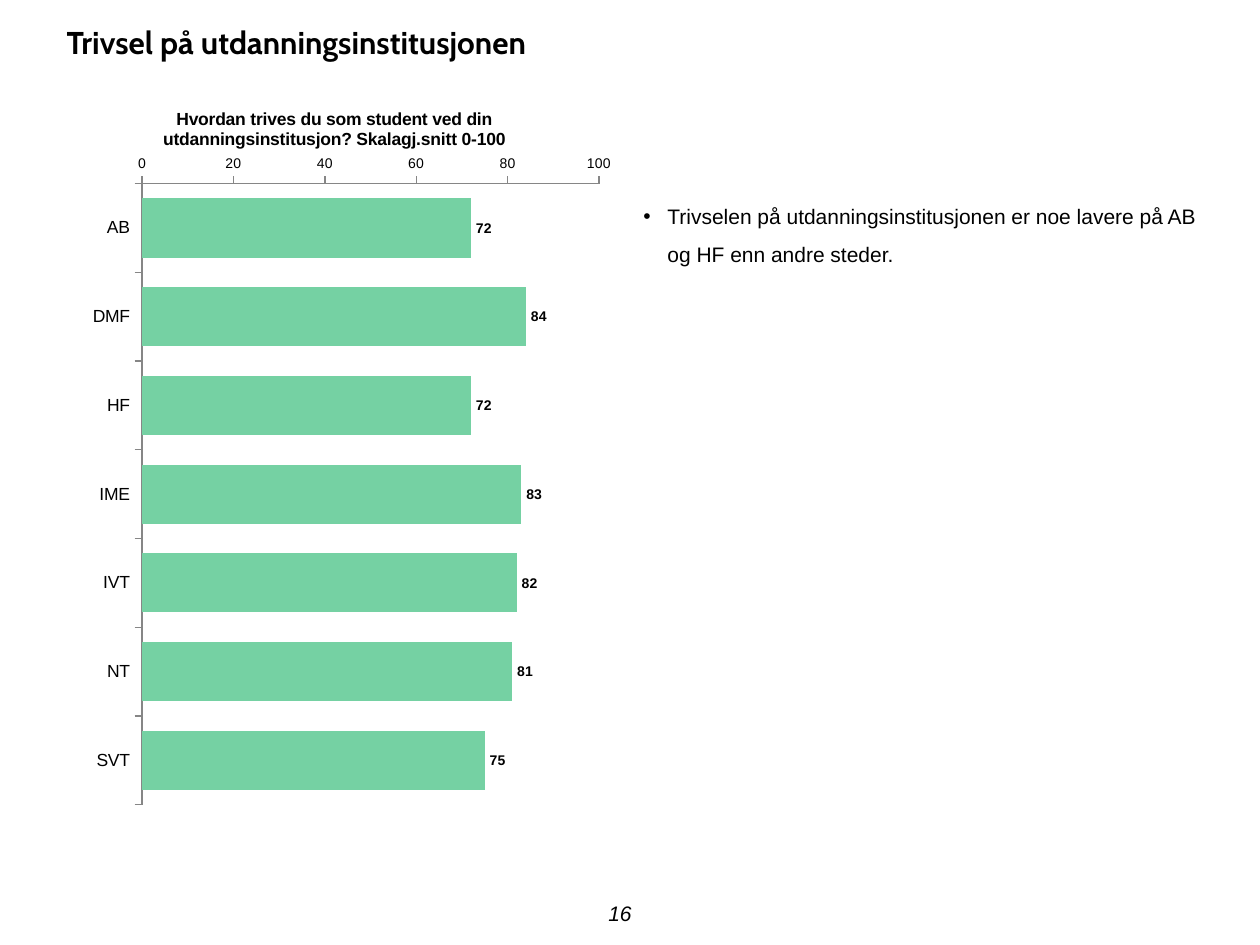
"""Build a slide on student well-being by faculty, with a bar chart and a comment."""
import pptx
import pptx.chart.data
import pptx.dml.color
import pptx.enum.chart
import pptx.enum.text
import pptx.oxml
import pptx.oxml.ns
import pptx.util

EMU_PER_PX = 914400 / 126
BLACK = pptx.dml.color.RGBColor(0x00, 0x00, 0x00)
GREY = pptx.dml.color.RGBColor(0x86, 0x86, 0x86)
GREEN = pptx.dml.color.RGBColor(0x75, 0xD1, 0xA3)
TITLE_ONLY = 5
SCORES = {"AB": 72, "DMF": 84, "HF": 72, "IME": 83, "IVT": 82, "NT": 81, "SVT": 75}


def px(length):
    return pptx.util.Emu(round(length * EMU_PER_PX))


def place(shape, left, top, width, height):
    shape.left, shape.top = px(left), px(top)
    shape.width, shape.height = px(width), px(height)


def style(font, size, name="Arial", bold=False, italic=False):
    font.size = pptx.util.Pt(size)
    font.name = name
    font.bold = bold
    font.italic = italic
    font.color.rgb = BLACK


def add_title(page, text):
    title = page.shapes.title
    place(title, 54, 16, 1155, 51)
    frame = title.text_frame
    frame.text = text
    frame.auto_size = pptx.enum.text.MSO_AUTO_SIZE.SHAPE_TO_FIT_TEXT
    frame.vertical_anchor = pptx.enum.text.MSO_ANCHOR.MIDDLE
    para = frame.paragraphs[0]
    para.alignment = pptx.enum.text.PP_ALIGN.LEFT
    style(para.font, 18, name="Cabin", bold=True)


def add_text(page, text, bounds, wrap=True):
    box = page.shapes.add_textbox(*map(px, bounds))
    box.text_frame.word_wrap = wrap
    para = box.text_frame.paragraphs[0]
    para.text = text
    return box, para


def add_bullet(page, text, bounds):
    box, para = add_text(page, text, bounds)
    box.text_frame.auto_size = pptx.enum.text.MSO_AUTO_SIZE.SHAPE_TO_FIT_TEXT
    para.line_spacing = 1.5
    properties = para._p.get_or_add_pPr()
    properties.set("marL", str(px(24)))
    properties.set("indent", str(-px(24)))
    namespace = pptx.oxml.ns.nsdecls("a")
    properties.append(pptx.oxml.parse_xml(f'<a:buFont {namespace} typeface="Arial"/>'))
    properties.append(pptx.oxml.parse_xml(f'<a:buChar {namespace} char="•"/>'))
    style(para.font, 12)


def add_page_number(page, text, bounds):
    box, para = add_text(page, text, bounds, wrap=False)
    box.text_frame.vertical_anchor = pptx.enum.text.MSO_ANCHOR.MIDDLE
    para.alignment = pptx.enum.text.PP_ALIGN.CENTER
    style(para.font, 12, italic=True)


def set_layout(element, index, target="", **fractions):
    for old in element.findall(pptx.oxml.ns.qn("c:layout")):
        element.remove(old)
    modes = "".join(f'<c:{axis}Mode val="edge"/>' for axis in "xy")
    sizes = "".join(f'<c:{key} val="{value}"/>' for key, value in fractions.items())
    element.insert(index, pptx.oxml.parse_xml(
        f'<c:layout {pptx.oxml.ns.nsdecls("c")}><c:manualLayout>'
        f'{target}{modes}{sizes}</c:manualLayout></c:layout>'))


def format_axis(axis, size):
    axis.has_major_gridlines = False
    axis.major_tick_mark = pptx.enum.chart.XL_TICK_MARK.OUTSIDE
    axis.minor_tick_mark = pptx.enum.chart.XL_TICK_MARK.NONE
    axis.format.line.color.rgb = GREY
    axis.format.line.width = pptx.util.Pt(0.75)
    style(axis.tick_labels.font, size)


def add_bar_chart(page, title, scores, bounds):
    data = pptx.chart.data.CategoryChartData(number_format="0")
    data.categories = list(scores)
    data.add_series("Series 1", list(scores.values()))
    chart = page.shapes.add_chart(
        pptx.enum.chart.XL_CHART_TYPE.BAR_CLUSTERED, *map(px, bounds), data).chart
    style(chart.font, 18)
    chart.has_legend = False

    chart.has_title = True
    heading = chart.chart_title.text_frame
    heading.text = title
    style(heading.paragraphs[0].font, 10, bold=True)
    set_layout(chart.chart_title._element, 1, x=0.21, y=0.03)

    format_axis(chart.category_axis, 10)
    chart.category_axis.reverse_order = True
    values = chart.value_axis
    format_axis(values, 8)
    values.minimum_scale, values.maximum_scale, values.major_unit = 0, 100, 20
    values.tick_labels.number_format = "0"
    values.tick_labels.number_format_is_linked = False

    plot = chart.plots[0]
    plot.gap_width = 50
    plot.vary_by_categories = False
    bars = plot.series[0]
    bars.format.fill.solid()
    bars.format.fill.fore_color.rgb = GREEN
    labels = bars.data_labels
    labels.show_value = True
    labels.position = pptx.enum.chart.XL_LABEL_POSITION.OUTSIDE_END
    labels.number_format = "0"
    labels.number_format_is_linked = False
    style(labels.font, 8, bold=True)
    set_layout(plot._element.getparent(), 0, '<c:layoutTarget val="inner"/>',
               x=0.18, y=0.135, w=0.768, h=0.825)


def main():
    deck = pptx.Presentation()
    deck.slide_width, deck.slide_height = px(1260), px(945)
    page = deck.slides.add_slide(deck.slide_layouts[TITLE_ONLY])
    add_title(page, "Trivsel på utdanningsinstitusjonen")
    add_page_number(page, "16", (585, 892, 70, 42))
    add_bullet(page, "Trivselen på utdanningsinstitusjonen er noe lavere på AB "
               "og HF enn andre steder.", (631, 185, 585, 90))
    add_bar_chart(page, "Hvordan trives du som student ved din "
                  "utdanningsinstitusjon? Skalagj.snitt 0-100", SCORES, (35, 82, 595, 753))
    deck.save("out.pptx")


if __name__ == "__main__":
    main()
